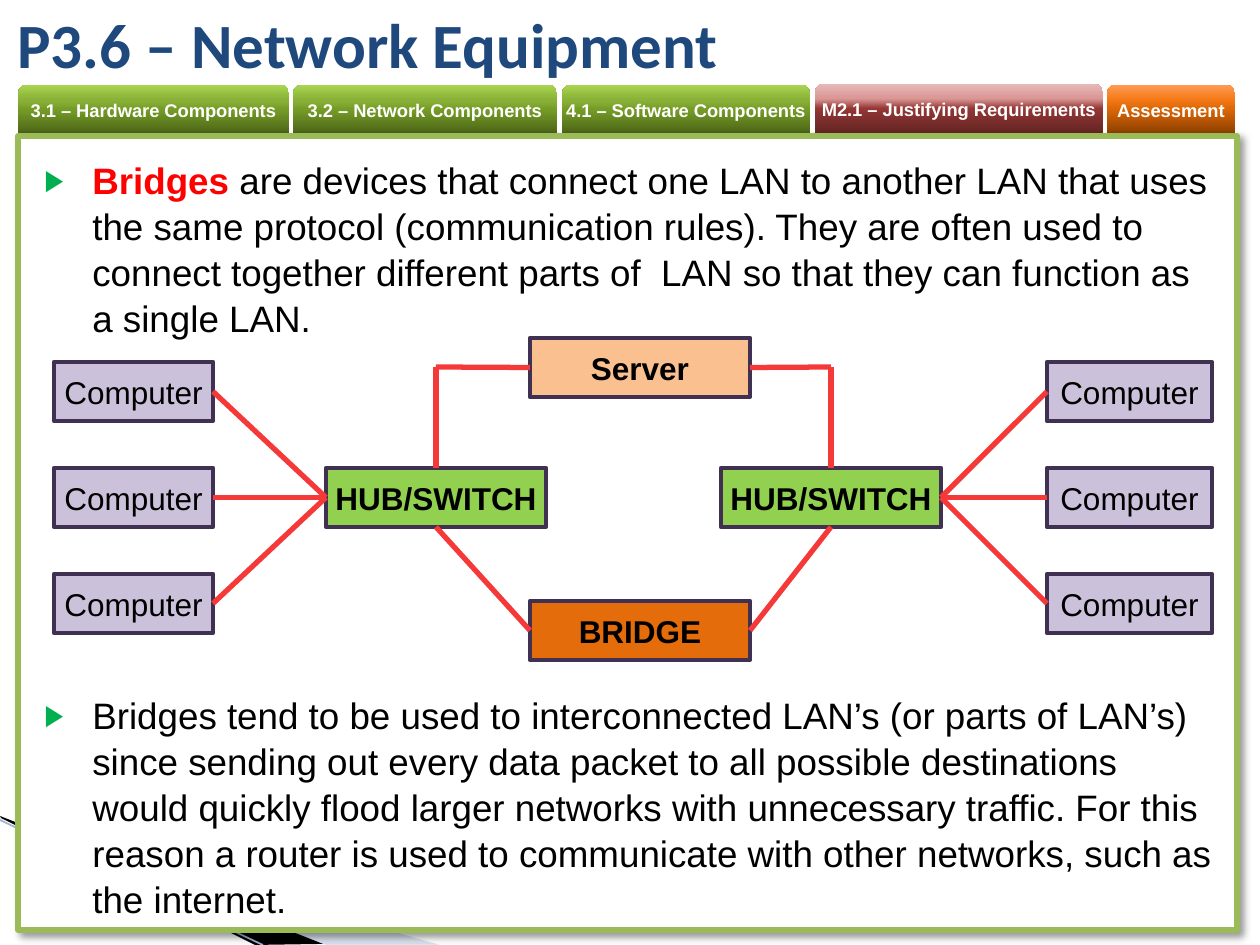
from lxml import etree
from pptx import Presentation
from pptx.dml.color import RGBColor
from pptx.enum import shapes, text
from pptx.oxml.ns import qn
from pptx.util import Pt

PX = 914400 / 126
C = {
    "white": "FFFFFF", "black": "000000", "title": "1F497D", "red": "FF0000",
    "bullet": "00B050", "panel": "9BBB59", "edge": "403152", "wire": "F53939",
    "swoosh": "A7B9DB", "curve": "9EB3D6", "server": "FAC090", "hub": "92D050",
    "bridge": "E46C0A", "computer": "CCC1DA",
}
GRADS = {
    "green": ["4A6316", "769C27", "89B137", "A9D651"],
    "maroon": ["632523", "953735", "D99694", "E6B9B8"],
    "orange": ["8B3F00", "DA6606", "F47917", "FF9C54"],
}
RECT = shapes.MSO_SHAPE.RECTANGLE

prs = Presentation()
prs.slide_width, prs.slide_height = round(1260 * PX), round(945 * PX)
s = prs.slides.add_slide(prs.slide_layouts[6])


def box(kind, x, y, w, h, fill=None, edge=None, width=0, label="", size=18, color="black", bold=False, inset=0):
    sp = s.shapes.add_shape(kind, *(round(v * PX) for v in (x, y, w, h)))
    sp.shadow.inherit = False
    if fill:
        sp.fill.solid()
        sp.fill.fore_color.rgb = RGBColor.from_string(C[fill])
    if edge:
        sp.line.color.rgb = RGBColor.from_string(C[edge])
        sp.line.width = Pt(width)
    else:
        sp.line.fill.background()
    tf = sp.text_frame
    tf.margin_left = tf.margin_right = tf.margin_top = tf.margin_bottom = round(inset * PX)
    tf.vertical_anchor = text.MSO_ANCHOR.MIDDLE
    if label:
        tf.text = label
        p = tf.paragraphs[0]
        p.alignment = text.PP_ALIGN.CENTER
        f = p.runs[0].font
        f.name, f.size, f.bold = "Arial", Pt(size), bold
        f.color.rgb = RGBColor.from_string(C[color])
    return sp


def line(x1, y1, x2, y2, color="wire", width=3, begin=None, end=None):
    cx = s.shapes.add_connector(shapes.MSO_CONNECTOR.STRAIGHT, *(round(v * PX) for v in (x1, y1, x2, y2)))
    if begin:
        cx.begin_connect(*begin)
    if end:
        cx.end_connect(*end)
    cx.line.color.rgb = RGBColor.from_string(C[color])
    cx.line.width = Pt(width)
    etree.SubElement(cx._element.spPr, qn("a:effectLst"))


for color, alpha, points in [
    ("swoosh", 40, [(0, 819), (440, 945), (326, 945), (0, 818)]),
    ("black", 100, [(0, 816), (323, 944), (255, 945), (1, 818)]),
]:
    fb = s.shapes.build_freeform(*points[0], scale=PX)
    fb.add_line_segments(points[1:])
    sp = fb.convert_to_shape()
    sp.shadow.inherit = False
    sp.fill.solid()
    sp.fill.fore_color.rgb = RGBColor.from_string(C[color])
    sp.line.fill.background()
    clr = sp._element.spPr.find(qn("a:solidFill"))[0]
    etree.SubElement(clr, qn("a:alpha"), val=str(alpha * 1000))
line(0, 820, 263, 945, "curve", 0.95)

for x, y, w, grad, label in [
    (18, 85, 271, "green", "3.1 – Hardware Components"),
    (293, 85, 264, "green", "3.2 – Network Components"),
    (562, 85, 248, "green", "4.1 – Software Components"),
    (815, 84, 288, "maroon", "M2.1 – Justifying Requirements"),
    (1107, 85, 128, "orange", "Assessment"),
]:
    sp = box(shapes.MSO_SHAPE.ROUND_2_SAME_RECTANGLE, x, y, w, 49,
             label=label, size=10.5, color="white", bold=True)
    sp.fill.gradient()
    sp.fill.gradient_angle = 90
    stops = sp._element.spPr.find(qn("a:gradFill")).find(qn("a:gsLst"))
    for gs in list(stops):
        stops.remove(gs)
    for pos, hue in zip((0, 50, 70, 100), GRADS[grad]):
        gs = etree.SubElement(stops, qn("a:gs"), pos=str(pos * 1000))
        etree.SubElement(gs, qn("a:srgbClr"), val=hue)

panel = box(RECT, 18, 136, 1219, 794, "white", "panel", 3)
effects = panel._element.spPr.find(qn("a:effectLst"))
shadow = etree.SubElement(effects, qn("a:outerShdw"), blurRad=str(Pt(4)), dist=str(Pt(3)),
                          dir="2700000", algn="tl", rotWithShape="0")
clr = etree.SubElement(shadow, qn("a:srgbClr"), val=C["black"])
etree.SubElement(clr, qn("a:alpha"), val="40000")

body = s.shapes.add_textbox(*(round(v * PX) for v in (32, 150, 1195, 770)))
tf = body.text_frame
tf.word_wrap = True
for i, parts in enumerate([
    [("Bridges ", "red"),
     ("are devices that connect one LAN to another LAN that uses the same protocol "
      "(communication rules). They are often used to connect together different parts of  LAN "
      "so that they can function as a single LAN.", "black")],
    [("Bridges tend to be used to interconnected LAN’s (or parts of LAN’s) since sending out "
      "every data packet to all possible destinations would quickly flood larger networks with "
      "unnecessary traffic. For this reason a router is used to communicate with other networks, "
      "such as the internet.", "black")],
]):
    p = tf.add_paragraph() if i else tf.paragraphs[0]
    p.line_spacing = 1.04
    if i:
        p.space_before = Pt(201)
    pPr = p._p.get_or_add_pPr()
    pPr.set("marL", str(round(48 * PX)))
    pPr.set("indent", str(round(-48 * PX)))
    clr = etree.SubElement(pPr, qn("a:buClr"))
    etree.SubElement(clr, qn("a:srgbClr"), val=C["bullet"])
    etree.SubElement(pPr, qn("a:buSzPct"), val="80000")
    etree.SubElement(pPr, qn("a:buFont"), typeface="Arial")
    etree.SubElement(pPr, qn("a:buChar"), char="▶")
    for words, color in parts:
        r = p.add_run()
        r.text = words
        r.font.name, r.font.size, r.font.bold = "Arial", Pt(21), color == "red"
        r.font.color.rgb = RGBColor.from_string(C[color])

node = {}
for name, x, y, fill, label in [
    ("server", 530, 338, "server", "Server"),
    ("right hub", 721, 468, "hub", "HUB/SWITCH"),
    ("left hub", 326, 468, "hub", "HUB/SWITCH"),
    ("bridge", 530, 601, "bridge", "BRIDGE"),
]:
    node[name] = box(RECT, x, y, 220, 59, fill, "edge", 2.5, label, bold=True, inset=6)

for x, w, hub, out, into in [(54, 159, "left hub", 3, 1), (1047, 165, "right hub", 1, 3)]:
    for row in range(3):
        pc = box(RECT, x, 362 + 106 * row, w, 59, "computer", "edge", 2.5, "Computer", inset=6)
        line(0, 0, 0, 0, begin=(pc, out), end=(node[hub], into))

for hub, corner, side in [("left hub", 436, 1), ("right hub", 831, 3)]:
    line(0, 0, 0, 0, begin=(node[hub], 2), end=(node["bridge"], side))
    line(corner, 367, corner, 468, end=(node[hub], 0))
    line(0, 0, corner, 367, begin=(node["server"], side))

title = s.shapes.add_textbox(*(round(v * PX) for v in (5, 0, 1062, 86)))
tf = title.text_frame
tf.word_wrap = True
tf.vertical_anchor = text.MSO_ANCHOR.MIDDLE
tf.text = "P3.6 – Network Equipment"
f = tf.paragraphs[0].runs[0].font
f.name, f.size, f.bold = "Calibri", Pt(36), True
f.color.rgb = RGBColor.from_string(C["title"])

prs.save("out.pptx")
